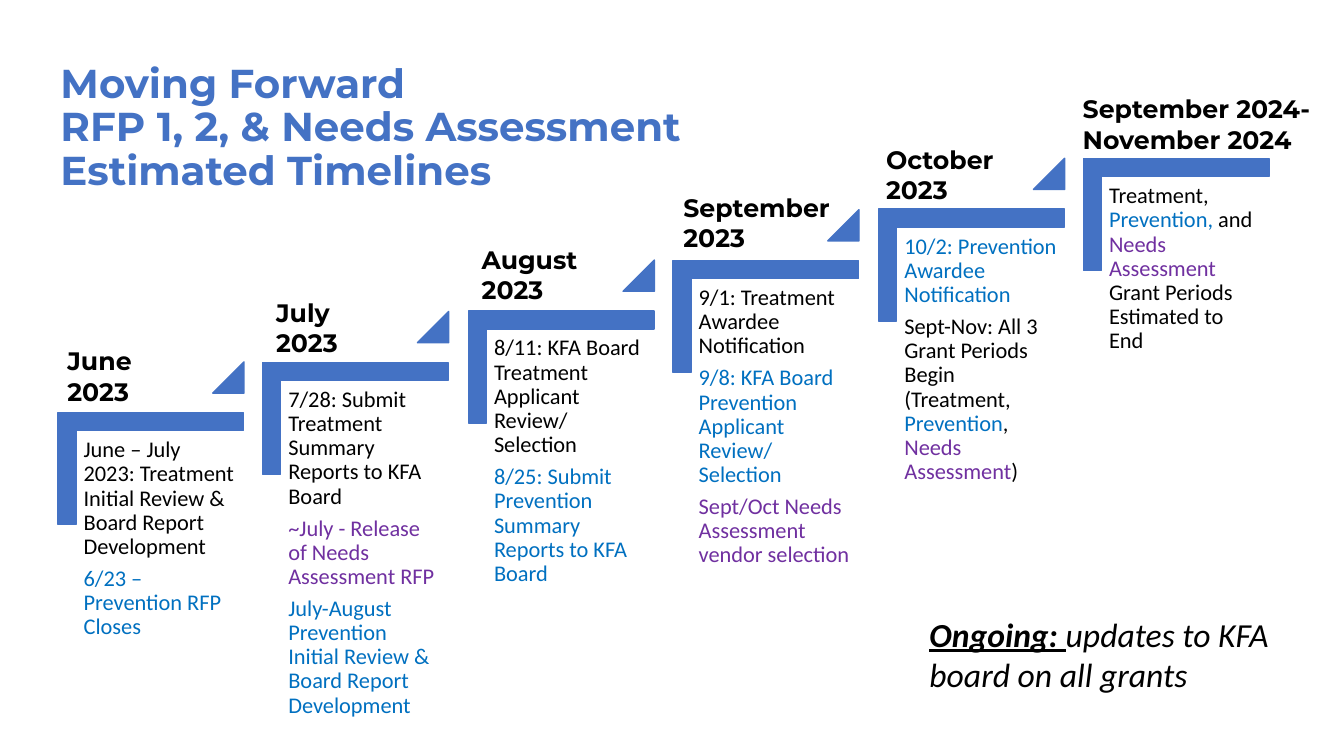
from pptx import Presentation
from pptx.dml.color import RGBColor
from pptx.enum.shapes import MSO_SHAPE
from pptx.enum.text import MSO_ANCHOR, MSO_AUTO_SIZE, PP_ALIGN
from pptx.util import Emu, Pt

CORNER = MSO_SHAPE.CORNER
TRIANGLE = MSO_SHAPE.ISOSCELES_TRIANGLE
MIDDLE = MSO_ANCHOR.MIDDLE
NO_FIT = MSO_AUTO_SIZE.NONE
LEFT = PP_ALIGN.LEFT

BLUE = RGBColor(0x44, 0x72, 0xC4)
BLACK = RGBColor(0x00, 0x00, 0x00)
PREVENTION = RGBColor(0x00, 0x70, 0xC0)
NEEDS = RGBColor(0x70, 0x30, 0xA0)

HEADING_FONT = "Montserrat"
BODY_FONT = "Calibri"
EMU_PER_PX = 9144
TITLE_ONLY = 5

STEP_ACROSS = 203.4
STEP_UP = 50.4

STEPS = [
    ((57, 338, 187), ["June", "2023"], [
        [("June – July 2023: Treatment Initial Review & Board Report Development", BLACK)],
        [("6/23 – Prevention RFP Closes", PREVENTION)],
    ]),
    ((264, 290, 187), ["July", "2023"], [
        [("7/28: Submit Treatment Summary Reports to KFA Board", BLACK)],
        [("~July - Release of Needs Assessment RFP", NEEDS)],
        [("July-August Prevention Initial Review & Board Report Development", PREVENTION)],
    ]),
    ((468, 237, 187), ["August", "2023"], [
        [("8/11: KFA Board Treatment Applicant Review/ Selection", BLACK)],
        [("8/25: Submit Prevention Summary Reports to KFA Board", PREVENTION)],
    ]),
    ((668, 186, 187), ["September", "2023"], [
        [("9/1: Treatment Awardee Notification", BLACK)],
        [("9/8: KFA Board Prevention Applicant Review/ Selection", PREVENTION)],
        [("Sept/Oct Needs Assessment vendor selection", NEEDS)],
    ]),
    ((869, 138, 187), ["October", "2023"], [
        [("10/2: Prevention Awardee Notification", PREVENTION)],
        [("Sept-Nov: All 3 Grant Periods Begin (Treatment, ", BLACK),
         ("Prevention", PREVENTION), (", ", BLACK),
         ("Needs Assessment", NEEDS), (")", BLACK)],
    ]),
    ((1064, 88, 259), ["September 2024-November 2024"], [
        [("Treatment, ", BLACK), ("Prevention, ", PREVENTION), ("and ", BLACK),
         ("Needs Assessment ", NEEDS), ("Grant Periods Estimated to End", BLACK)],
    ]),
]


def px(length):
    return Emu(length * EMU_PER_PX)


class TimelineSlide:
    def __init__(self, presentation):
        self.slide = presentation.slides.add_slide(presentation.slide_layouts[TITLE_ONLY])

    def style(self, run, font, size, color, bold=False):
        run.font.name = font
        run.font.size = Pt(size)
        run.font.color.rgb = color
        run.font.bold = bold

    def title(self, text, left, top, width, height):
        shape = self.slide.shapes.title
        shape.left, shape.top = px(left), px(top)
        shape.width, shape.height = px(width), px(height)
        frame = shape.text_frame
        frame.text = text
        frame.auto_size = NO_FIT
        frame.vertical_anchor = MIDDLE
        paragraph = frame.paragraphs[0]
        paragraph.alignment = LEFT
        paragraph.line_spacing = 0.9
        for run in paragraph.runs:
            self.style(run, HEADING_FONT, 28.8, BLUE, True)

    def text_box(self, left, top, width, height):
        shape = self.slide.shapes.add_textbox(px(left), px(top), px(width), px(height))
        shape.text_frame.word_wrap = True
        return shape.text_frame

    def heading(self, lines, left, top, width):
        frame = self.text_box(left, top, width, 71)
        frame.text = "\n".join(lines)
        for paragraph in frame.paragraphs:
            self.style(paragraph.runs[0], HEADING_FONT, 18, BLACK, True)

    def body(self, entries, left, top):
        frame = self.text_box(left, top, 166, 146)
        frame.margin_left = frame.margin_right = px(7)
        frame.margin_top = frame.margin_bottom = px(7)
        for index, parts in enumerate(entries):
            paragraph = frame.add_paragraph() if index else frame.paragraphs[0]
            paragraph.line_spacing = 0.9
            paragraph.space_after = Pt(5.6)
            for text, color in parts:
                run = paragraph.add_run()
                run.text = text
                self.style(run, BODY_FONT, 16, color)

    def block(self, kind, left, top, width, height, adjustments, rotation=0):
        shape = self.slide.shapes.add_shape(kind, px(left), px(top), px(width), px(height))
        shape.shadow.inherit = False
        shape.rotation = rotation
        for index, value in enumerate(adjustments):
            shape.adjustments[index] = value
        shape.fill.solid()
        shape.fill.fore_color.rgb = BLUE
        shape.line.color.rgb = BLUE
        shape.line.width = Pt(1)

    def note(self, label, text, left, top, width, height):
        paragraph = self.text_box(left, top, width, height).paragraphs[0]
        for content, is_label in ((label, True), (text, False)):
            run = paragraph.add_run()
            run.text = content
            self.style(run, BODY_FONT, 24, BLACK, is_label)
            run.font.italic = True
            run.font.underline = is_label


def main():
    presentation = Presentation()
    presentation.slide_width = px(1333)
    presentation.slide_height = px(750)

    timeline = TimelineSlide(presentation)
    timeline.title("Moving Forward \vRFP 1, 2, & Needs Assessment \vEstimated Timelines",
                   50, 55, 811, 145)
    for index, (heading_place, heading, entries) in enumerate(STEPS):
        across = round(index * STEP_ACROSS)
        up = round(index * STEP_UP)
        timeline.block(CORNER, 94 + across, 373 - up, 111, 184, (0.161, 0.161), 90)
        timeline.body(entries, 76 + across, 428 - up)
        if index < len(STEPS) - 1:
            timeline.block(TRIANGLE, 211 + across, 359 - up, 31, 31, (1,))
        timeline.heading(heading, *heading_place)
    timeline.note("Ongoing: ", "updates to KFA board on all grants", 912, 604, 401, 91)

    presentation.save("out.pptx")


if __name__ == "__main__":
    main()
